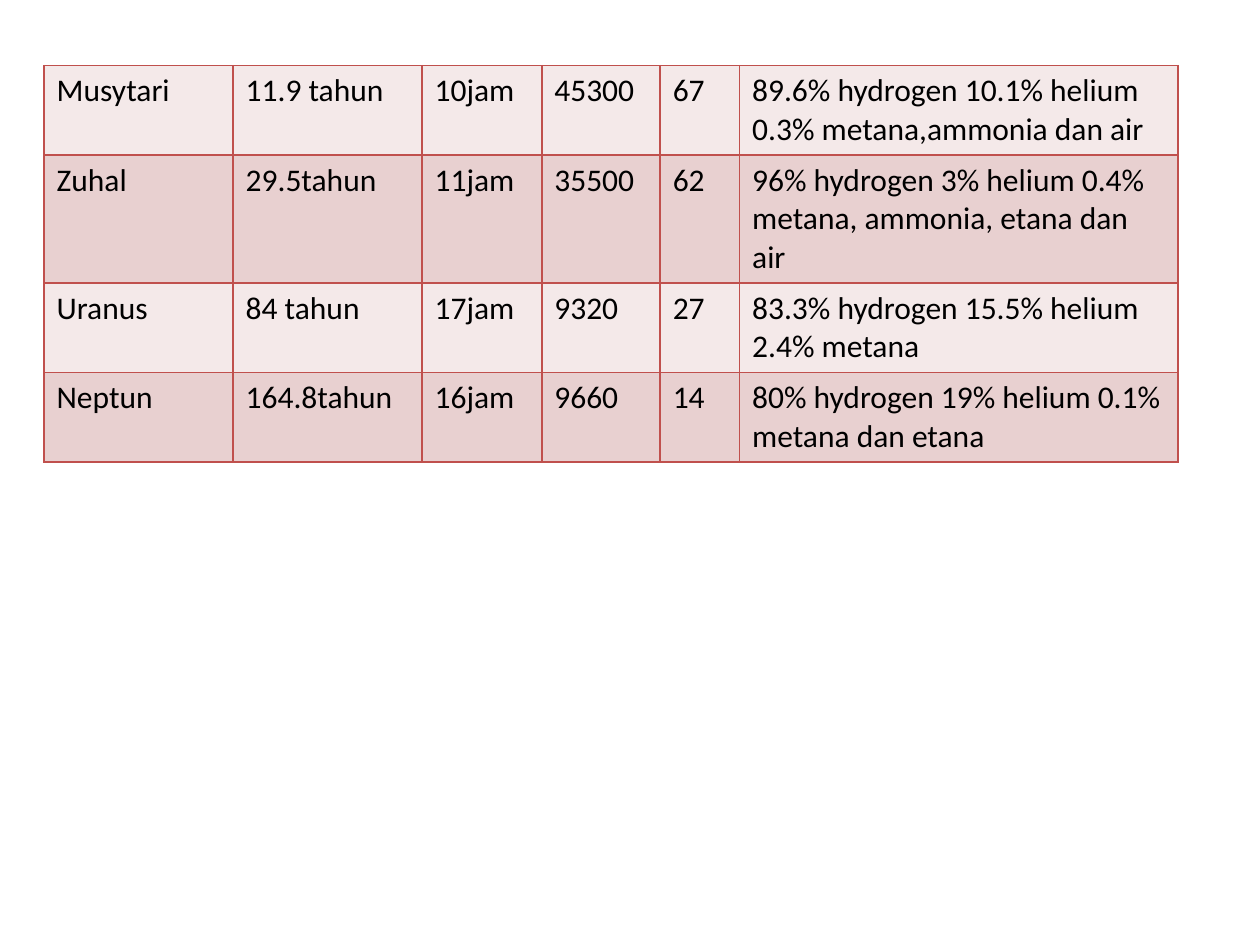
"""Build a slide with a table of facts about the four outer planets."""
from lxml import etree
from pptx import Presentation
from pptx.dml.color import RGBColor
from pptx.oxml.ns import qn
from pptx.util import Inches, Pt

BLACK = RGBColor(0x00, 0x00, 0x00)
RED = RGBColor(0xC0, 0x50, 0x4D)
BANDS = [RGBColor(0xF4, 0xE9, 0xE9), RGBColor(0xE8, 0xD0, 0xD0)]
FONT = {"name": "Calibri", "size": Pt(18), "bold": False}
FLAGS = {"first_row": False, "horz_banding": False}
WIDTHS = [1.5, 1.5, 0.95, 0.94, 0.63, 3.48]
HEIGHT = 0.41
ROWS = [
    ["Musytari", "11.9 tahun", "10jam", "45300", "67",
     "89.6% hydrogen 10.1% helium 0.3% metana,ammonia dan air"],
    ["Zuhal", "29.5tahun", "11jam", "35500", "62",
     "96% hydrogen 3% helium 0.4% metana, ammonia, etana dan air"],
    ["Uranus", "84 tahun", "17jam", "9320", "27",
     "83.3% hydrogen 15.5% helium 2.4% metana"],
    ["Neptun", "164.8tahun", "16jam", "9660", "14",
     "80% hydrogen 19% helium 0.1% metana dan etana"],
]


def add_borders(cell):
    props = cell._tc.get_or_add_tcPr()
    for side in ("a:lnL", "a:lnR", "a:lnT", "a:lnB"):
        line = etree.SubElement(props, qn(side), w=str(Pt(1)))
        fill = etree.SubElement(line, qn("a:solidFill"))
        etree.SubElement(fill, qn("a:srgbClr"), val=str(RED))


prs = Presentation()
prs.slide_width = Inches(10)
prs.slide_height = Inches(7.5)
slide = prs.slides.add_slide(prs.slide_layouts[6])

table = slide.shapes.add_table(
    len(ROWS), len(WIDTHS), Inches(0.35), Inches(0.52),
    Inches(sum(WIDTHS)), Inches(HEIGHT * len(ROWS))).table
for key, value in FLAGS.items():
    setattr(table, key, value)
for column, width in zip(table.columns, WIDTHS):
    column.width = Inches(width)

for r, planet in enumerate(ROWS):
    table.rows[r].height = Inches(HEIGHT)
    for c, text in enumerate(planet):
        cell = table.cell(r, c)
        add_borders(cell)
        cell.fill.solid()
        cell.fill.fore_color.rgb = BANDS[r % 2]
        cell.text = text
        font = cell.text_frame.paragraphs[0].runs[0].font
        for key, value in FONT.items():
            setattr(font, key, value)
        font.color.rgb = BLACK

prs.save("out.pptx")
